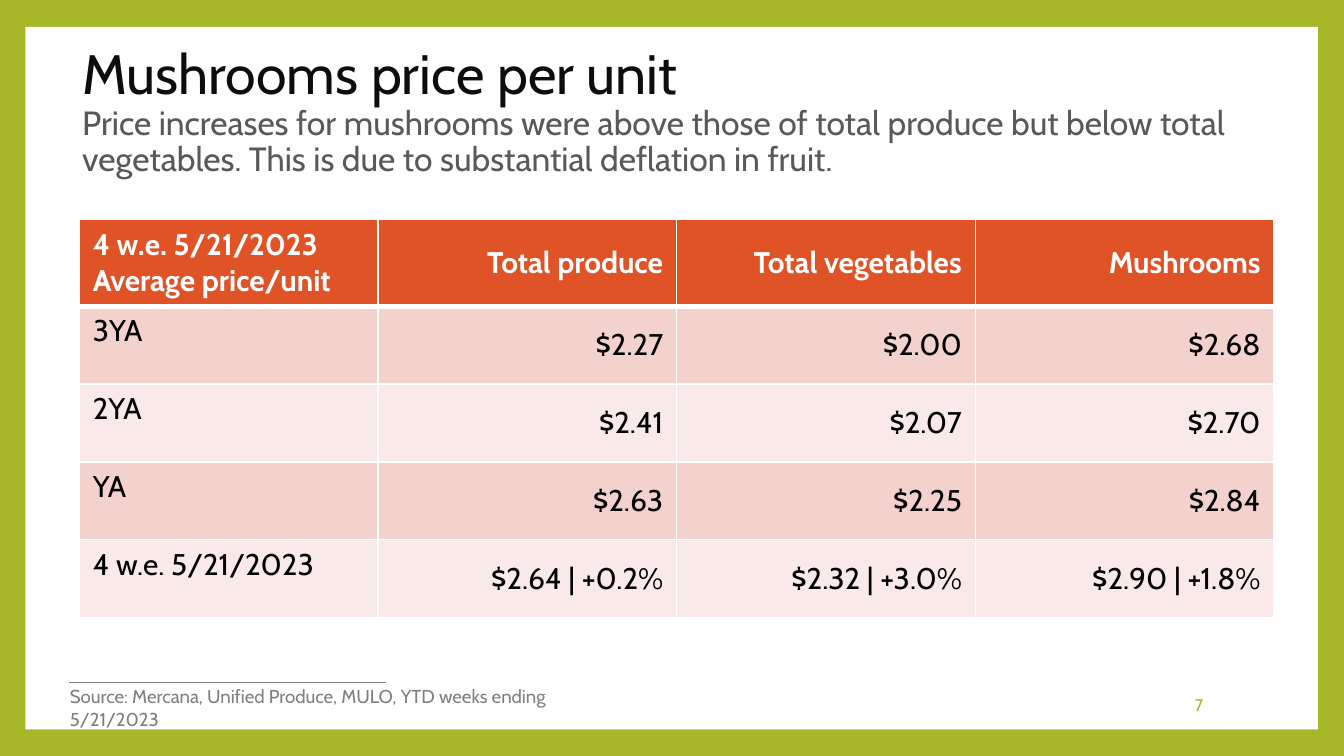
import pptx
import pptx.dml.color
import pptx.enum.shapes
import pptx.enum.text
import pptx.oxml
import pptx.oxml.ns
import pptx.util
from pptx.util import Cm

FONT = "Cabin"
COLORS = {
    "green": "A6B727", "white": "FFFFFF", "title": "0D0D0D", "subtitle": "595959",
    "gray": "808080", "header": "DF5327", "band_dark": "F3D1CD",
    "band_light": "F9E9E8", "black": "000000",
}
ALIGN = pptx.enum.text.PP_ALIGN
ANCHOR = pptx.enum.text.MSO_ANCHOR

ROWS = [
    ["4 w.e. 5/21/2023\nAverage price/unit", "Total produce", "Total vegetables", "Mushrooms"],
    ["3YA", "$2.27", "$2.00", "$2.68"],
    ["2YA", "$2.41", "$2.07", "$2.70"],
    ["YA", "$2.63", "$2.25", "$2.84"],
    ["4 w.e. 5/21/2023", "$2.64 | +0.2%", "$2.32 | +3.0%", "$2.90 | +1.8%"],
]


def rgb(name):
    return pptx.dml.color.RGBColor.from_string(COLORS[name])


def paint(fill, color):
    fill.solid()
    fill.fore_color.rgb = rgb(color)


def add_text(p, text, size, color, bold=False, align=ALIGN.LEFT):
    p.alignment = align
    r = p.add_run()
    r.text = text
    r.font.name = FONT
    r.font.size = pptx.util.Pt(size)
    r.font.bold = bold
    r.font.color.rgb = rgb(color)


def set_borders(cell, color, bottom=1):
    """Draw all four cell sides, 1 pt wide except the bottom one."""
    tc_pr = cell._tc.get_or_add_tcPr()
    widths = {"lnL": 1, "lnR": 1, "lnT": 1, "lnB": bottom}
    for i, (side, width) in enumerate(widths.items()):
        tc_pr.insert(i, pptx.oxml.parse_xml(
            f'<a:{side} {pptx.oxml.ns.nsdecls("a")} w="{pptx.util.Pt(width)}">'
            f'<a:solidFill><a:srgbClr val="{COLORS[color]}"/></a:solidFill></a:{side}>'))


def add_frame(s, x, y, w, h):
    """Green slide background with a white panel behind everything else."""
    paint(s.background.fill, "green")
    sp = s.shapes.add_shape(pptx.enum.shapes.MSO_SHAPE.RECTANGLE, x, y, w, h)
    sp.shadow.inherit = False
    paint(sp.fill, "white")
    sp.line.fill.background()
    sp.element.getparent().insert(2, sp.element)


def add_title(s, x, y, w, h):
    sp = s.shapes.title
    sp.left, sp.top, sp.width, sp.height = x, y, w, h
    tf = sp.text_frame
    tf.auto_size = pptx.enum.text.MSO_AUTO_SIZE.NONE
    tf.vertical_anchor = ANCHOR.MIDDLE
    p = tf.paragraphs[0]
    p.line_spacing = 0.9
    p.space_before = pptx.util.Pt(0)
    add_text(p, "Mushrooms price per unit", 29.7, "title")
    p.add_line_break()
    add_text(p, "Price increases for mushrooms were above those of total produce but below "
             "total vegetables. This is due to substantial deflation in fruit.", 18, "subtitle")


def add_price_table(s, x, y, w, h):
    header_h = Cm(1.65)
    table = s.shapes.add_table(len(ROWS), len(ROWS[0]), x, y, w, h).table
    for col in table.columns:
        col.width = w // len(ROWS[0])
    for i, values in enumerate(ROWS):
        head = i == 0
        table.rows[i].height = header_h if head else (h - header_h) // (len(ROWS) - 1)
        fill = "header" if head else ("band_light", "band_dark")[i % 2]
        for j, value in enumerate(values):
            cell = table.cell(i, j)
            paint(cell.fill, fill)
            set_borders(cell, "white", bottom=3 if head else 1)
            cell.vertical_anchor = ANCHOR.MIDDLE if head or j else ANCHOR.TOP
            tf = cell.text_frame
            for k, line in enumerate(value.split("\n")):
                p = tf.add_paragraph() if k else tf.paragraphs[0]
                add_text(p, line, 16, "white" if head else "black", bold=head,
                         align=ALIGN.RIGHT if j else ALIGN.LEFT)


def add_footer(s, x, y, w, h):
    """Rule, source note and page number along the bottom edge."""
    rule = s.shapes.add_connector(pptx.enum.shapes.MSO_CONNECTOR.STRAIGHT,
                                  x + Cm(0.23), y + Cm(0.07), x + Cm(6.22), y + Cm(0.07))
    rule.line.color.rgb = rgb("gray")
    rule.line.width = pptx.util.Pt(0.79)
    rule.element.spPr.append(
        pptx.oxml.parse_xml(f'<a:effectLst {pptx.oxml.ns.nsdecls("a")}/>'))

    tf = s.shapes.add_textbox(x, y, Cm(10.95), h).text_frame
    tf.word_wrap = True
    add_text(tf.paragraphs[0],
             "Source: Mercana, Unified Produce, MULO, YTD weeks ending 5/21/2023", 10, "gray")

    number_w = Cm(3.56)
    tf = s.shapes.add_textbox(x + w - number_w, y + Cm(0.12), number_w, Cm(0.76)).text_frame
    tf.word_wrap = True
    tf.vertical_anchor = ANCHOR.MIDDLE
    add_text(tf.paragraphs[0], "7", 9, "green", align=ALIGN.RIGHT)


def main():
    prs = pptx.Presentation()
    prs.slide_width, prs.slide_height = Cm(25.4), Cm(14.29)
    s = prs.slides.add_slide(prs.slide_layouts[5])
    add_frame(s, Cm(0.48), Cm(0.51), Cm(24.43), Cm(13.28))
    add_title(s, Cm(1.3), Cm(1.45), Cm(23.01), Cm(1.37))
    add_price_table(s, Cm(1.5), Cm(4.14), Cm(22.58), Cm(7.53))
    add_footer(s, Cm(1.07), Cm(12.83), Cm(21.92), Cm(0.69))
    prs.save("out.pptx")


if __name__ == "__main__":
    main()
